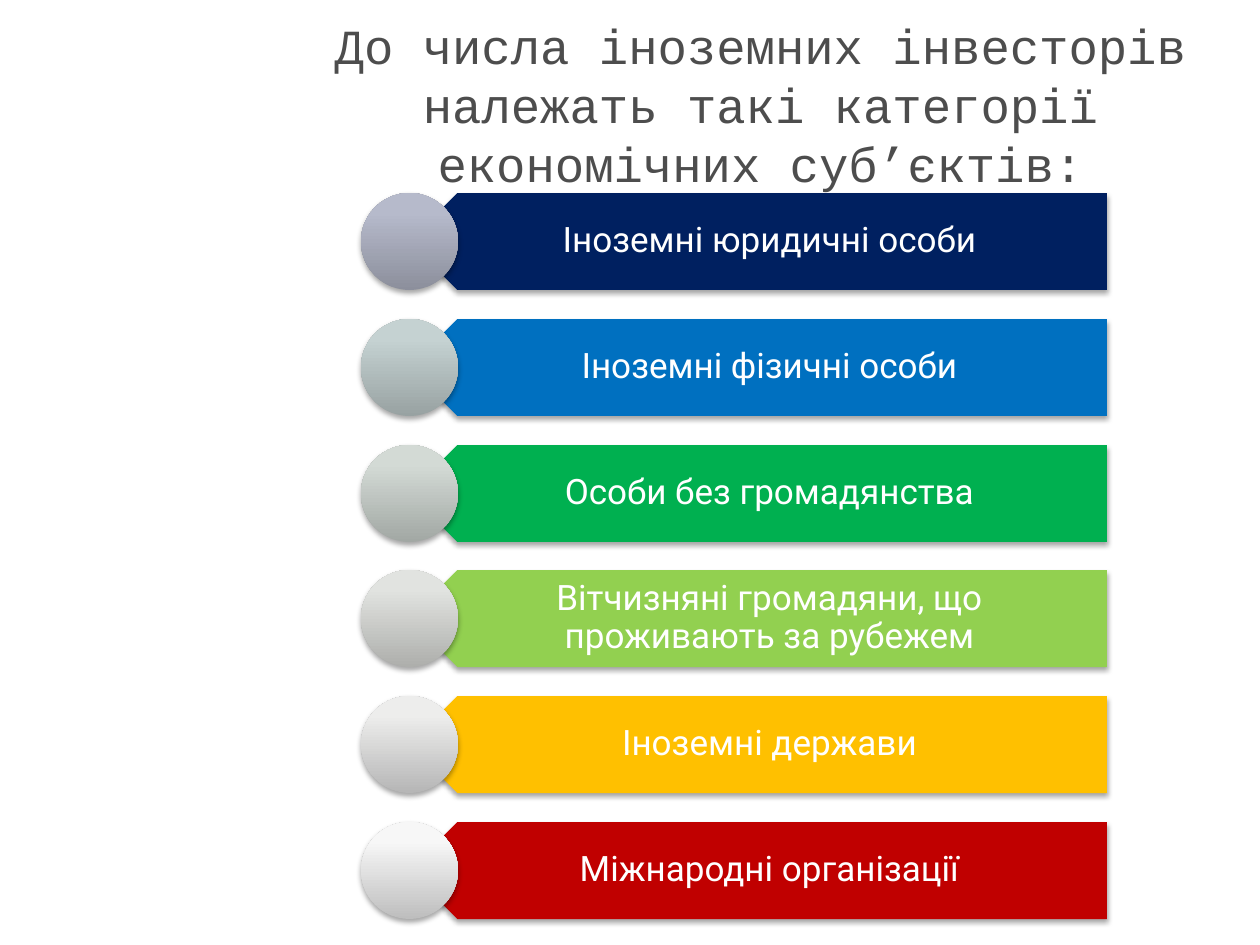
from pptx import Presentation
from pptx import util as u
from pptx.dml.color import RGBColor
from pptx.enum import shapes, text
from pptx.oxml import parse_xml
from pptx.oxml.ns import nsdecls

PX = 914400 // 126
COLORS = {"title": "4D4D4D", "label": "FFFFFF", "shadow": "000000"}

# Label, bar colour, circle gradient from bottom to top
INVESTORS = [
    ("Іноземні юридичні особи", "002060", ("8C8F9C", "B6BACB", "B6BBCC")),
    ("Іноземні фізичні особи", "0070C0", ("98A2A2", "C5D2D2", "C5D3D3")),
    ("Особи без громадянства", "00B050", ("A2A8A4", "D3DAD5", "D4DBD6")),
    ("Вітчизняні громадяни, що проживають за рубежем", "92D050",
     ("AEAFAC", "E1E3E0", "E2E4E1")),
    ("Іноземні держави", "FFC000", ("B6B6B6", "EDEDEC", "EEEEED")),
    ("Міжнародні організації", "C00000", ("BEBEBE", "F7F7F7", "F8F8F8")),
]
FIRST_TOP, LAST_TOP = 193, 822
ROW_HEIGHT = 97
BAR_LEFT, BAR_WIDTH = 409, 698
CIRCLE_LEFT = 361


def px(*lengths):
    return [u.Emu(length * PX) for length in lengths]


def add_text(parent, words, box, *, font, size, color, spacing,
             anchor=text.MSO_ANCHOR.MIDDLE, insets=(0, 0, 0, 0)):
    frame = parent.add_textbox(*px(*box)).text_frame
    frame.word_wrap = True
    frame.vertical_anchor = anchor
    (frame.margin_left, frame.margin_top,
     frame.margin_right, frame.margin_bottom) = px(*insets)
    paragraph = frame.paragraphs[0]
    paragraph.alignment = text.PP_ALIGN.CENTER
    paragraph.line_spacing = spacing
    run = paragraph.add_run()
    run.text = words
    run.font.name = font
    run.font.size = u.Pt(size)
    run.font.color.rgb = RGBColor.from_string(color)


def add_shadow(shape):
    shape.shadow.inherit = False
    properties = shape._element.spPr
    properties.remove(properties.find("{*}effectLst"))
    properties.append(parse_xml(
        f'<a:effectLst {nsdecls("a")}>'
        f'<a:outerShdw blurRad="{u.Pt(3.1)}" dist="{u.Pt(1.8)}" dir="5400000" rotWithShape="0">'
        f'<a:srgbClr val="{COLORS["shadow"]}"><a:alpha val="35000"/></a:srgbClr>'
        '</a:outerShdw></a:effectLst>'))


def add_bar(parent, box, color):
    bar = parent.add_shape(shapes.MSO_SHAPE.PENTAGON, *px(*box))
    bar.rotation = 180
    bar.fill.solid()
    bar.fill.fore_color.rgb = RGBColor.from_string(color)
    bar.line.fill.background()
    add_shadow(bar)


def add_circle(parent, box, gradient):
    circle = parent.add_shape(shapes.MSO_SHAPE.OVAL, *px(*box))
    circle.line.fill.background()
    stops = "".join(
        f'<a:gs pos="{position}"><a:srgbClr val="{color}"/></a:gs>'
        for position, color in zip((0, 80000, 100000), gradient))
    circle._element.spPr.find("{*}prstGeom").addnext(parse_xml(
        f'<a:gradFill {nsdecls("a")} rotWithShape="1"><a:gsLst>{stops}</a:gsLst>'
        '<a:lin ang="16200000" scaled="0"/></a:gradFill>'))
    add_shadow(circle)


def main():
    presentation = Presentation()
    presentation.slide_width, presentation.slide_height = u.Inches(10), u.Inches(7.5)
    slide = presentation.slides.add_slide(presentation.slide_layouts[6])

    # Title grows upwards from the bottom of its box
    add_text(slide.shapes,
             "До числа іноземних інвесторів належать такі категорії економічних суб’єктів:",
             (283, 91, 955, 101), font="Courier New", size=28, color=COLORS["title"],
             spacing=u.Pt(33.7), anchor=text.MSO_ANCHOR.BOTTOM)

    # Investor list: one bar, label and circle per row
    investor_list = slide.shapes.add_group_shape().shapes
    pitch = (LAST_TOP - FIRST_TOP) / (len(INVESTORS) - 1)
    for row, (label, bar_color, gradient) in enumerate(INVESTORS):
        top = round(FIRST_TOP + row * pitch)
        bar_box = (BAR_LEFT, top, BAR_WIDTH, ROW_HEIGHT)
        add_bar(investor_list, bar_box, bar_color)
        add_text(investor_list, label, bar_box, font="Roboto", size=20,
                 color=COLORS["label"], spacing=0.9, insets=(43, 10, 20, 10))
        add_circle(investor_list, (CIRCLE_LEFT, top, ROW_HEIGHT, ROW_HEIGHT), gradient)

    presentation.save("out.pptx")


if __name__ == "__main__":
    main()
